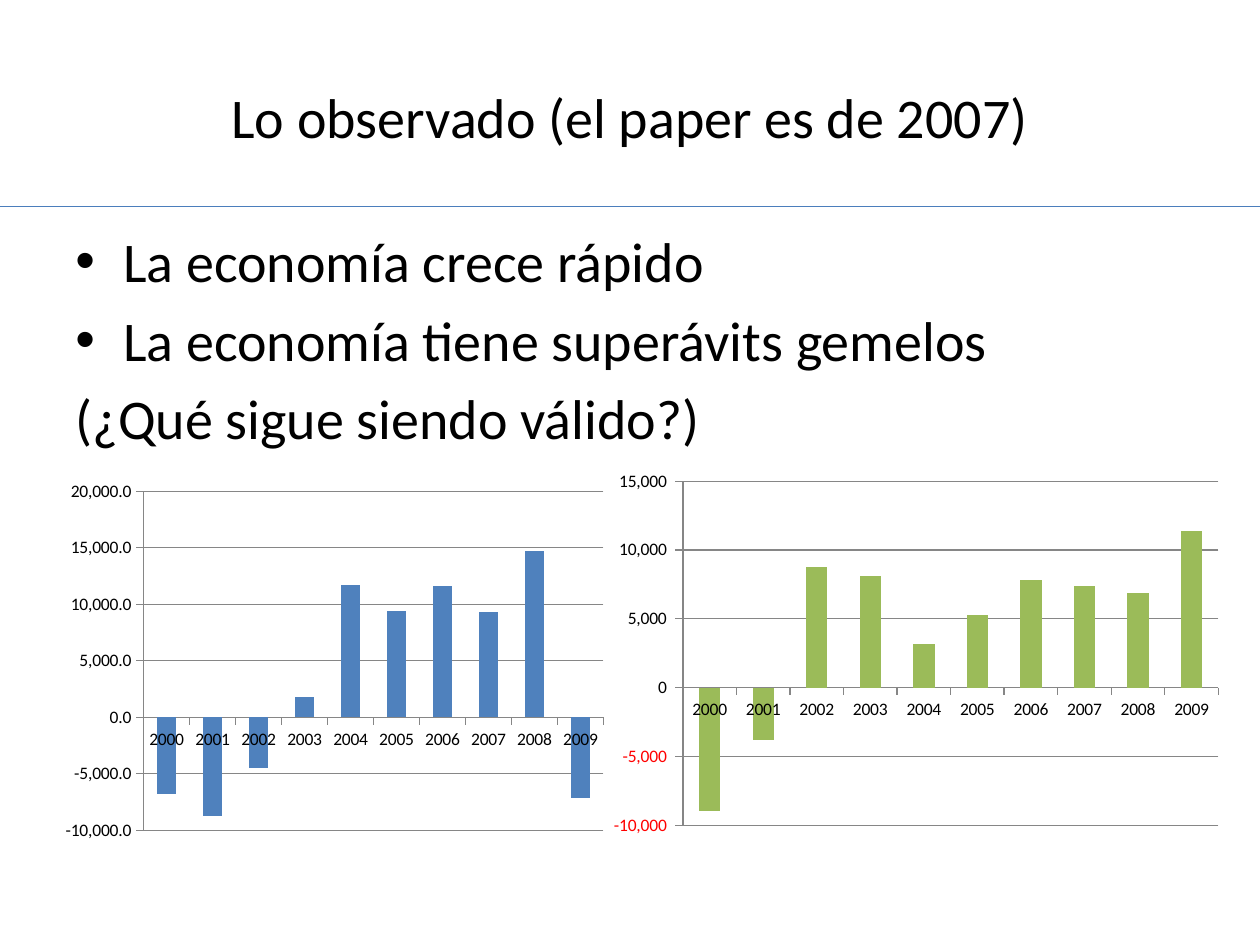
from lxml import etree
from pptx import Presentation
from pptx import util as u
from pptx.chart.data import CategoryChartData
from pptx.dml.color import RGBColor
from pptx.enum import chart as ch, shapes, text
from pptx.oxml import parse_xml
from pptx.oxml.ns import nsdecls, qn

TITLE = "Lo observado (el paper es de 2007)"
POINTS = [
    ("La economía crece rápido", True),
    ("La economía tiene superávits gemelos", True),
    ("(¿Qué sigue siendo válido?)", False),
]
YEARS = [str(year) for year in range(2000, 2010)]
BALANCES = [
    dict(box=(0.39, 3.75, 5, 2.99), plot=(0.15, 0.05, 0.73, 0.9), color="4F81BD",
         number_format="#,##0.0", limits=(-10000, 20000),
         values=[-6800, -8700, -4500, 1800, 11700, 9400, 11600, 9300, 14700, -7100]),
    dict(box=(4.77, 3.67, 5, 3), plot=(0.13, 0.05, 0.85, 0.91), color="9BBB59",
         number_format="#,##0_ ;[Red]\\-#,##0\\ ", limits=(-10000, 15000),
         values=[-9000, -3800, 8800, 8100, 3200, 5300, 7800, 7400, 6900, 11400]),
]
FONT, BLACK, GRAY, RULE = "Calibri", "000000", "868686", "4B7EBC"


def rgb(value):
    return RGBColor.from_string(value)


def inches(values):
    return [u.Inches(value) for value in values]


def style_font(font, size):
    font.name, font.size, font.color.rgb = FONT, u.Pt(size), rgb(BLACK)


def write(paragraph, content, size=32, align=text.PP_ALIGN.LEFT, before=0, hanging=0, bullet=False):
    paragraph.alignment, paragraph.space_before = align, u.Pt(before)
    run = paragraph.add_run()
    run.text = content
    style_font(run.font, size)
    properties = paragraph._p.get_or_add_pPr()
    properties.set("marL", str(u.Inches(hanging)))
    properties.set("indent", str(-u.Inches(hanging)))
    if bullet:
        properties.append(parse_xml(f'<a:buFont {nsdecls("a")} typeface="Arial"/>'))
        properties.append(parse_xml(f'<a:buChar {nsdecls("a")} char="•"/>'))


def add_frame(slide, box, anchor):
    frame = slide.shapes.add_textbox(*inches(box)).text_frame
    frame.word_wrap, frame.vertical_anchor = True, anchor
    return frame


def add_rule(slide, y):
    rule = slide.shapes.add_connector(shapes.MSO_CONNECTOR.STRAIGHT, *inches((0, y, 10, y)))
    rule.line.color.rgb, rule.line.width = rgb(RULE), u.Pt(0.75)
    etree.SubElement(rule._element.spPr, qn("a:effectLst"))


def place_plot(chart, plot):
    modes = '<c:layoutTarget val="inner"/><c:xMode val="edge"/><c:yMode val="edge"/>'
    sizes = "".join(f'<c:{key} val="{value}"/>' for key, value in zip("xywh", plot))
    area = chart._chartSpace.chart.plotArea
    for layout in area.findall(qn("c:layout")):
        area.remove(layout)
    area.insert(0, parse_xml(
        f'<c:layout {nsdecls("c")}><c:manualLayout>{modes}{sizes}</c:manualLayout></c:layout>'))


def add_balance(slide, box, plot, color, number_format, limits, values):
    data = CategoryChartData()
    data.categories = YEARS
    data.add_series("Series 1", values)
    chart = slide.shapes.add_chart(ch.XL_CHART_TYPE.COLUMN_CLUSTERED, *inches(box), data).chart
    chart.has_legend = chart.has_title = False
    style_font(chart.font, 10)
    place_plot(chart, plot)
    columns = chart.plots[0]
    columns.gap_width, columns.vary_by_categories = 150, False
    series = columns.series[0]
    series.invert_if_negative = False
    series.format.fill.solid()
    series.format.fill.fore_color.rgb = rgb(color)
    amounts = chart.value_axis
    amounts.minimum_scale, amounts.maximum_scale = limits
    amounts.major_unit, amounts.has_major_gridlines = 5000, True
    amounts.tick_labels.number_format = number_format
    amounts.tick_labels.number_format_is_linked = False
    for axis in (chart.category_axis, amounts):
        axis.major_tick_mark = ch.XL_TICK_MARK.OUTSIDE
        axis.format.line.color.rgb = rgb(GRAY)
    amounts.major_gridlines.format.line.color.rgb = rgb(GRAY)


def main():
    """Build the slide on observed growth and twin surpluses."""
    deck = Presentation()
    deck.slide_width, deck.slide_height = inches((10, 7.5))
    slide = deck.slides.add_slide(deck.slide_layouts[6])
    add_rule(slide, 1.64)
    title = add_frame(slide, (0.5, 0.3, 9, 1.25), text.MSO_ANCHOR.MIDDLE)
    write(title.paragraphs[0], TITLE, align=text.PP_ALIGN.CENTER)
    body = add_frame(slide, (0.5, 1.75, 9, 4.95), text.MSO_ANCHOR.TOP)
    for index, (point, bullet) in enumerate(POINTS):
        paragraph = body.add_paragraph() if index else body.paragraphs[0]
        write(paragraph, point, before=6.4, hanging=0.38, bullet=bullet)
    for balance in BALANCES:
        add_balance(slide, **balance)
    deck.save("out.pptx")


if __name__ == "__main__":
    main()
